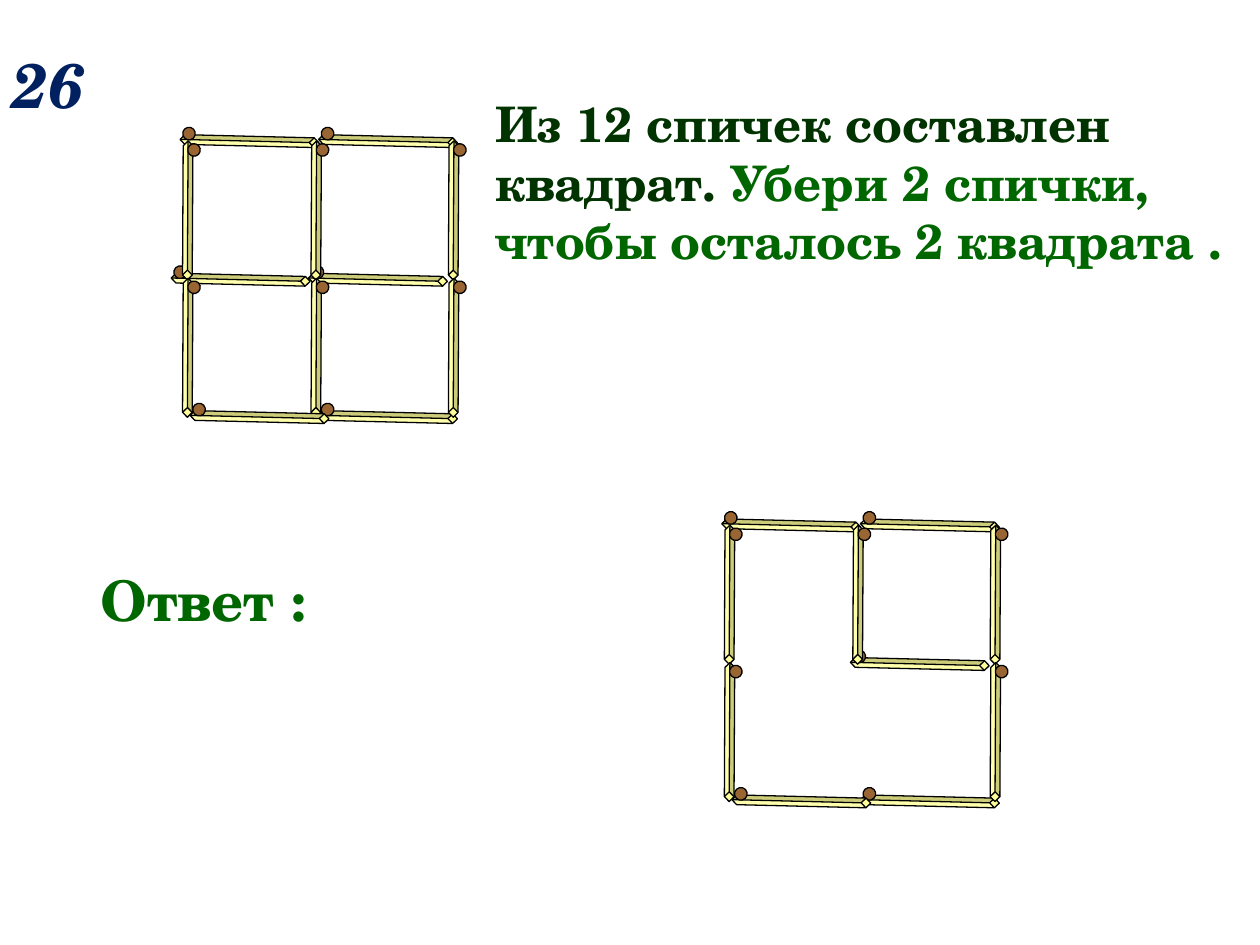
import pptx
import pptx.util
import pptx.dml.color
import pptx.enum.shapes
import pptx.enum.text
from pptx.util import Inches

COLORS = {"navy": "002060", "dark": "003300", "green": "006600",
          "wood": "FFFF99", "head": "996633", "outline": "000000"}
SHAPES = pptx.enum.shapes.MSO_SHAPE
ANCHORS = pptx.enum.text.MSO_ANCHOR

deck = pptx.Presentation()
deck.slide_width, deck.slide_height = Inches(10), Inches(7.5)
page = deck.slides.add_slide(deck.slide_layouts[5])


def write(box, place, spans, size, anchor=ANCHORS.TOP, italic=None):
    """Place a text box and fill its only paragraph run by run."""
    box.left, box.top, box.width, box.height = [Inches(v) for v in place]
    frame = box.text_frame
    frame.word_wrap = True
    frame.auto_size = pptx.enum.text.MSO_AUTO_SIZE.NONE
    frame.vertical_anchor = anchor
    para = frame.paragraphs[0]
    para.alignment = pptx.enum.text.PP_ALIGN.LEFT
    for text, color in spans:
        span = para.add_run()
        span.text = text
        span.font.name = "TeX Gyre Schola"
        span.font.size = pptx.util.Pt(size)
        span.font.bold = True
        span.font.italic = italic
        span.font.color.rgb = pptx.dml.color.RGBColor.from_string(COLORS[color])


def add_part(match, kind, left, top, size, angle, color):
    """Add the stick or the head of one match to its group."""
    part = match.shapes.add_shape(kind, Inches(left), Inches(top),
                                  Inches(size), Inches(size))
    part.rotation = angle
    part.shadow.inherit = False
    part.fill.solid()
    part.fill.fore_color.rgb = pptx.dml.color.RGBColor.from_string(COLORS[color])
    part.line.color.rgb = pptx.dml.color.RGBColor.from_string(COLORS["outline"])
    part.line.width = pptx.util.Pt(0.75)
    return part


# Task, its number and the answer label
write(page.shapes.title, (3.83, 0.69, 6.17, 1.51),
      [("Из 12 спичек составлен квадрат. ", "dark"),
       ("Убери 2 спички, чтобы осталось 2 квадрата .", "green")], 28)
write(page.shapes.add_textbox(0, 0, 0, 0), (0, 0.31, 0.87, 0.71),
      [("26", "navy")], 36, italic=True)
write(page.shapes.add_textbox(0, 0, 0, 0), (0.7, 3.52, 2.18, 1.55),
      [("Ответ :", "green")], 32, ANCHORS.BOTTOM)

# Direction: rotation and offset of the head from the stick
DIRECTIONS = {"across": (226.4, -0.14, 0.28), "down": (315.3, 0.39, -0.14)}

# Matches from back to front: direction, left, top, kept in the answer
MATCHES = [
    ("across", 1.59, 0.73, True),
    ("across", 2.69, 0.73, True),
    ("down", 3.21, 1.28, True),
    ("across", 2.61, 1.83, True),
    ("across", 1.52, 1.83, False),
    ("across", 2.69, 2.92, True),
    ("down", 1.10, 1.28, True),
    ("down", 2.12, 1.28, True),
    ("down", 1.10, 2.37, True),
    ("down", 3.21, 2.37, True),
    ("down", 2.12, 2.37, False),
    ("across", 1.67, 2.92, True),
]

# The full square, then the answer with two matches removed
for shift_x, shift_y, is_answer in [(0, 0, False), (4.3, 3.05, True)]:
    for direction, left, top, kept in MATCHES:
        if is_answer and not kept:
            continue
        angle, head_x, head_y = DIRECTIONS[direction]
        left, top = left + shift_x, top + shift_y
        match = page.shapes.add_group_shape()
        stick = add_part(match, SHAPES.CUBE, left, top, 0.78, angle, "wood")
        stick.adjustments[0] = 0.93
        add_part(match, SHAPES.OVAL, left + head_x, top + head_y, 0.1, angle, "head")

deck.save("out.pptx")
